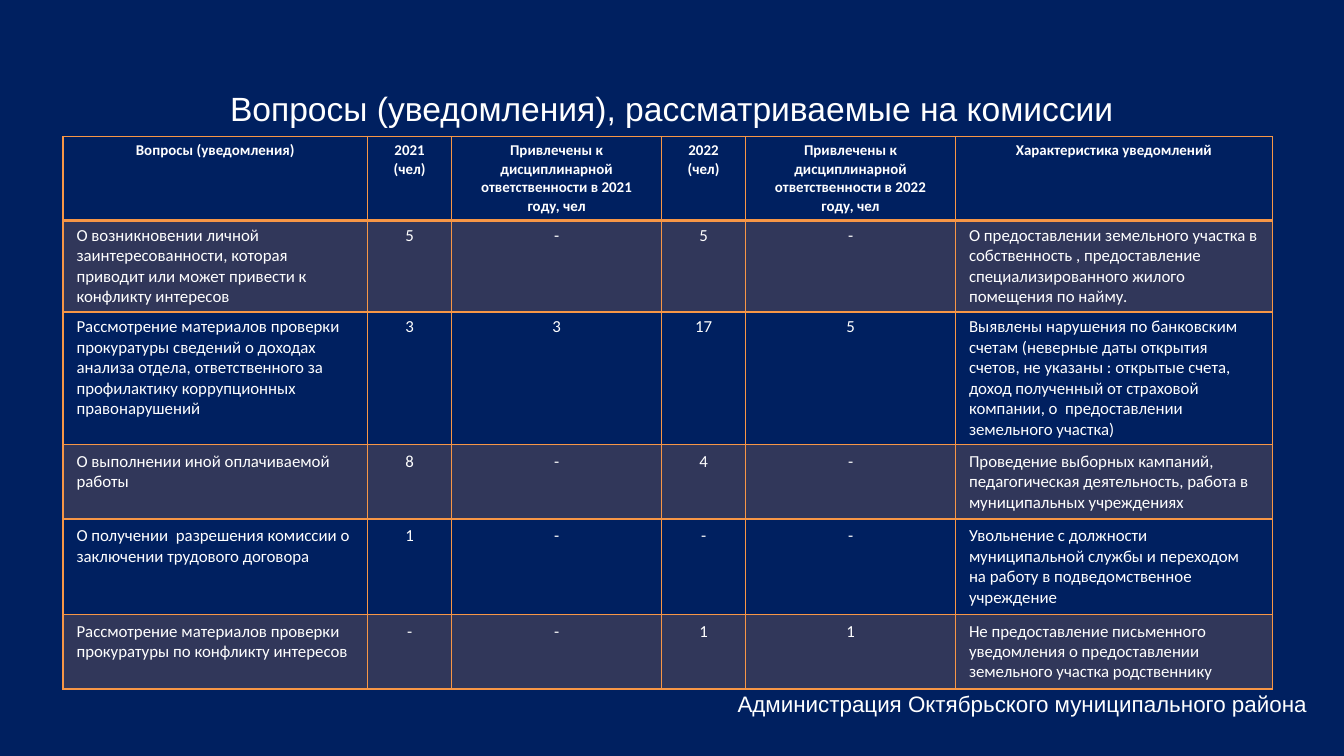
from lxml import etree
from pptx import Presentation
from pptx.dml.color import RGBColor
from pptx.enum import text
from pptx.oxml.ns import qn
from pptx.util import Pt

NAVY = RGBColor(0x00, 0x20, 0x60)
ORANGE = RGBColor(0xF7, 0x96, 0x46)
WHITE = RGBColor(0xFF, 0xFF, 0xFF)

COLUMN_WIDTHS = [163.2, 45, 112.5, 45, 112.5, 169.8]
ROW_HEIGHTS = [45, 49, 71, 40, 51, 40]
TEXT_COLUMNS = (0, 5)
ROWS = [
    ["Вопросы (уведомления)", "2021\n(чел)",
     "Привлечены к дисциплинарной ответственности в 2021 году, чел", "2022\n(чел)",
     "Привлечены к дисциплинарной ответственности в 2022 году, чел",
     "Характеристика уведомлений"],
    ["О возникновении личной\nзаинтересованности, которая приводит или может привести "
     "к конфликту интересов", "5", "-", "5", "-",
     "О предоставлении земельного участка в собственность , предоставление "
     "специализированного жилого помещения по найму."],
    ["Рассмотрение материалов проверки прокуратуры сведений о доходах\nанализа отдела, "
     "ответственного за профилактику коррупционных правонарушений", "3", "3", "17", "5",
     "Выявлены нарушения по банковским счетам (неверные даты открытия счетов, "
     "не указаны : открытые счета,  доход полученный от страховой компании, "
     "о  предоставлении  земельного участка)"],
    ["О выполнении иной оплачиваемой работы", "8", "-", "4", "-",
     "Проведение выборных кампаний, педагогическая деятельность, работа в "
     "муниципальных учреждениях"],
    ["О получении  разрешения комиссии о заключении трудового договора",
     "1", "-", "-", "-",
     "Увольнение с должности муниципальной службы и переходом на работу в "
     "подведомственное учреждение"],
    ["Рассмотрение материалов проверки прокуратуры по конфликту интересов",
     "-", "-", "1", "1",
     "Не предоставление письменного уведомления о предоставлении земельного участка "
     "родственнику"],
]


def format_text(text_frame, font_name, size, alignment, bold=False):
    for paragraph in text_frame.paragraphs:
        paragraph.alignment = alignment
        for run in paragraph.runs:
            run.font.name = font_name
            run.font.size = Pt(size)
            run.font.bold = bold
            run.font.color.rgb = WHITE


def add_label(slide, left, top, width, height, wording, size, alignment, anchor):
    label = slide.shapes.add_textbox(Pt(left), Pt(top), Pt(width), Pt(height))
    frame = label.text_frame
    frame.word_wrap = True
    frame.vertical_anchor = anchor
    frame.text = wording
    format_text(frame, "Arial", size, alignment)


def set_borders(cell, widths):
    """Draw orange borders; widths maps the sides L, R, T, B to points."""
    properties = cell._tc.get_or_add_tcPr()
    for index, side in enumerate("LRTB"):
        line = etree.Element(qn(f"a:ln{side}"), w=str(Pt(widths[side])))
        fill = etree.SubElement(line, qn("a:solidFill"))
        etree.SubElement(fill, qn("a:srgbClr"), val=str(ORANGE))
        properties.insert(index, line)


def fill_cell(cell, tinted):
    """Tint the cell with 20 % orange or leave it clear."""
    if not tinted:
        cell.fill.background()
        return
    cell.fill.solid()
    cell.fill.fore_color.rgb = ORANGE
    color = cell._tc.tcPr.find(f".//{qn('a:srgbClr')}")
    etree.SubElement(color, qn("a:alpha"), val="20000")


def add_questions_table(slide, left, top):
    frame = slide.shapes.add_table(
        len(ROWS), len(COLUMN_WIDTHS), Pt(left), Pt(top),
        Pt(sum(COLUMN_WIDTHS)), Pt(sum(ROW_HEIGHTS)))
    table = frame.table
    for column, width in zip(table.columns, COLUMN_WIDTHS):
        column.width = Pt(width)
    for row, height in zip(table.rows, ROW_HEIGHTS):
        row.height = Pt(height)

    for row_index, wordings in enumerate(ROWS):
        header = row_index == 0
        for column_index, wording in enumerate(wordings):
            cell = table.cell(row_index, column_index)
            cell.margin_left = cell.margin_right = Pt(7.2)
            cell.margin_top = cell.margin_bottom = Pt(2.7 if row_index < 3 else 3.6)
            cell.text_frame.text = wording
            left_aligned = not header and column_index in TEXT_COLUMNS
            format_text(cell.text_frame, "Calibri", 8 if header else 9,
                        text.PP_ALIGN.LEFT if left_aligned else text.PP_ALIGN.CENTER,
                        bold=header)
            fill_cell(cell, tinted=row_index % 2 == 1)
            set_borders(cell, {"L": 1, "R": 1,
                               "T": 2 if row_index == 1 else 1,
                               "B": 2 if header else 1})


def main():
    presentation = Presentation()
    presentation.slide_width = Pt(720)
    presentation.slide_height = Pt(405)
    slide = presentation.slides.add_slide(presentation.slide_layouts[6])
    slide.background.fill.solid()
    slide.background.fill.fore_color.rgb = NAVY

    add_label(slide, 36, 42, 648, 32,
              "Вопросы (уведомления), рассматриваемые на комиссии",
              18, text.PP_ALIGN.CENTER, text.MSO_ANCHOR.MIDDLE)
    add_questions_table(slide, 33.8, 73.2)
    add_label(slide, 388, 366, 320.5, 21.8,
              "Администрация Октябрьского муниципального района",
              12, text.PP_ALIGN.LEFT, text.MSO_ANCHOR.TOP)
    presentation.save("out.pptx")


if __name__ == "__main__":
    main()
